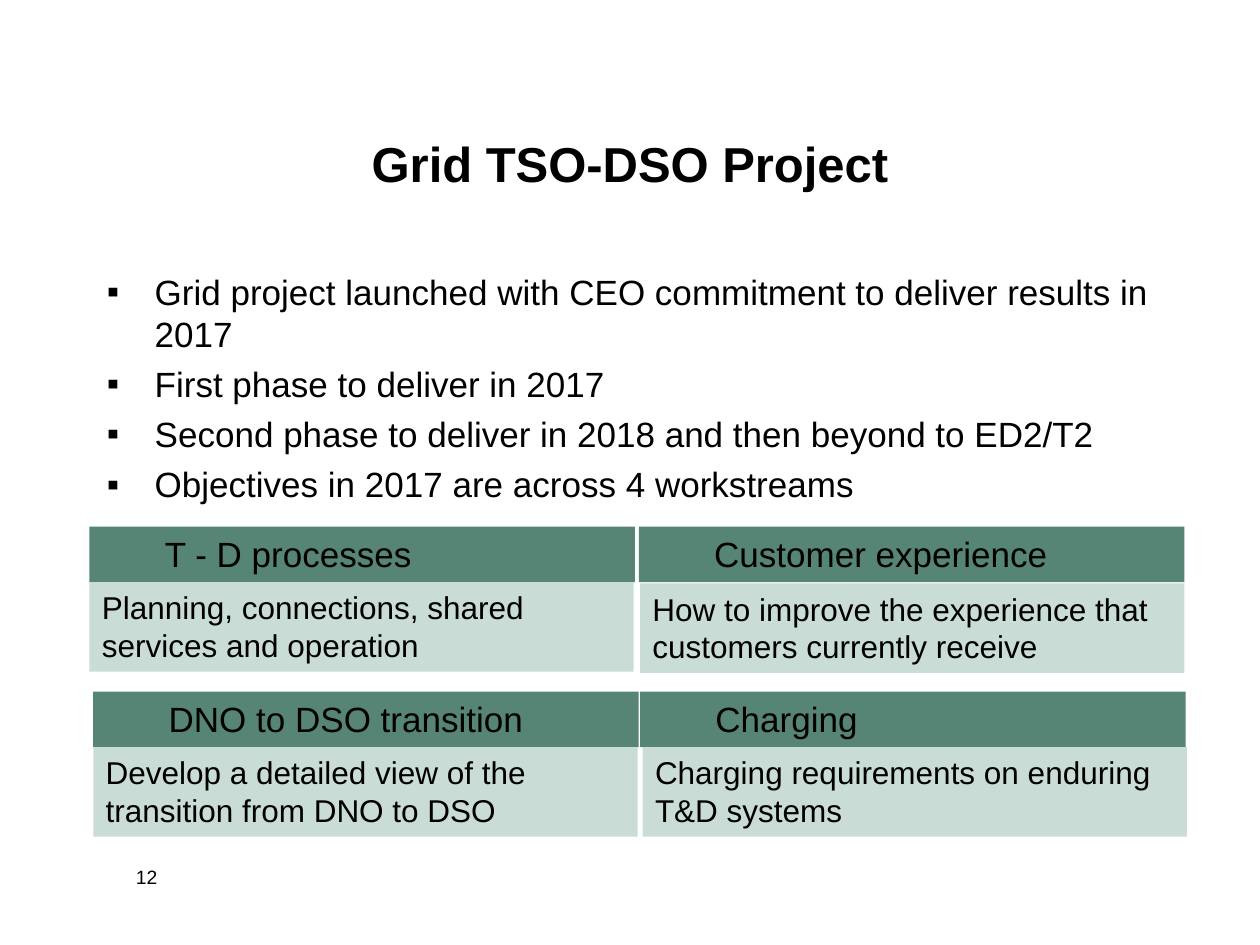
from lxml import etree
from pptx import Presentation
from pptx.dml.color import RGBColor
from pptx.enum.shapes import MSO_SHAPE
from pptx.enum.text import MSO_ANCHOR, PP_ALIGN
from pptx.oxml.ns import qn
from pptx.util import Inches, Pt

BLACK = RGBColor(0x00, 0x00, 0x00)
GREEN = RGBColor(0x57, 0x85, 0x75)
PALE_GREEN = RGBColor(0xCA, 0xDC, 0xD6)

# Content
TITLE = "Grid TSO-DSO Project"
POINTS = [
    "Grid project launched with CEO commitment to deliver results in 2017",
    "First phase to deliver in 2017",
    "Second phase to deliver in 2018 and then beyond to ED2/T2",
    "Objectives in 2017 are across 4 workstreams",
]
PAGE_NUMBER = "12"
# Heading, detail, heading (left, top), detail (left, top)
WORKSTREAMS = [
    ("T - D processes", "Planning, connections, shared services and operation",
     (0.71, 4.18), (0.71, 4.62)),
    ("Customer experience", "How to improve the experience that customers currently receive",
     (5.07, 4.18), (5.08, 4.63)),
    ("DNO to DSO transition", "Develop a detailed view of the transition from DNO to DSO",
     (0.74, 5.49), (0.74, 5.93)),
    ("Charging", "Charging requirements on enduring T&D systems",
     (5.08, 5.49), (5.10, 5.93)),
]
HEADING_SIZE = (4.33, 0.44)
DETAIL_SIZE = (4.32, 0.71)


def style(paragraph, size, bold=False):
    font = paragraph.font
    font.name, font.size, font.bold = "Arial", Pt(size), bold
    font.color.rgb = BLACK


def indent(paragraph, left, first=0, bullet=None):
    props = paragraph._p.get_or_add_pPr()
    props.set("marL", str(Inches(left)))
    props.set("indent", str(Inches(first)))
    if bullet:
        etree.SubElement(props, qn("a:buFont")).set("typeface", "Arial")
        etree.SubElement(props, qn("a:buChar")).set("char", bullet)


def add_text(left, top, width, height):
    box = slide.shapes.add_textbox(*map(Inches, (left, top, width, height)))
    box.text_frame.word_wrap = True
    return box.text_frame


def add_panel(text, position, extent, fill, size, left_indent=0):
    panel = slide.shapes.add_shape(MSO_SHAPE.RECTANGLE, *map(Inches, position + extent))
    panel.shadow.inherit = False
    panel.fill.solid()
    panel.fill.fore_color.rgb = fill
    panel.line.fill.background()
    frame = panel.text_frame
    frame.word_wrap = True
    frame.vertical_anchor = MSO_ANCHOR.TOP
    paragraph = frame.paragraphs[0]
    paragraph.text = text
    paragraph.alignment = PP_ALIGN.LEFT
    indent(paragraph, left_indent)
    style(paragraph, size)


deck = Presentation()
deck.slide_width, deck.slide_height = Inches(10), Inches(7.5)
slide = deck.slides.add_slide(deck.slide_layouts[6])

# Title
title = add_text(0.75, 0.67, 8.5, 1.25)
title.vertical_anchor = MSO_ANCHOR.MIDDLE
title.text = TITLE
title.paragraphs[0].alignment = PP_ALIGN.CENTER
style(title.paragraphs[0], 28, bold=True)

# Bullet points
points = add_text(0.75, 2.1, 8.53, 2.28)
points.text = "\n".join(POINTS)
for number, point in enumerate(points.paragraphs):
    if number:
        point.space_before = Pt(4.6)
    indent(point, 0.38, -0.38, "▪")
    style(point, 20)

# Page number
page = add_text(0.98, 6.82, 2.08, 0.5)
page.text = PAGE_NUMBER
style(page.paragraphs[0], 11)

# Workstream panels
for heading, detail, heading_at, detail_at in WORKSTREAMS:
    add_panel(heading, heading_at, HEADING_SIZE, GREEN, 20, left_indent=0.5)
    add_panel(detail, detail_at, DETAIL_SIZE, PALE_GREEN, 18)

deck.save("out.pptx")
